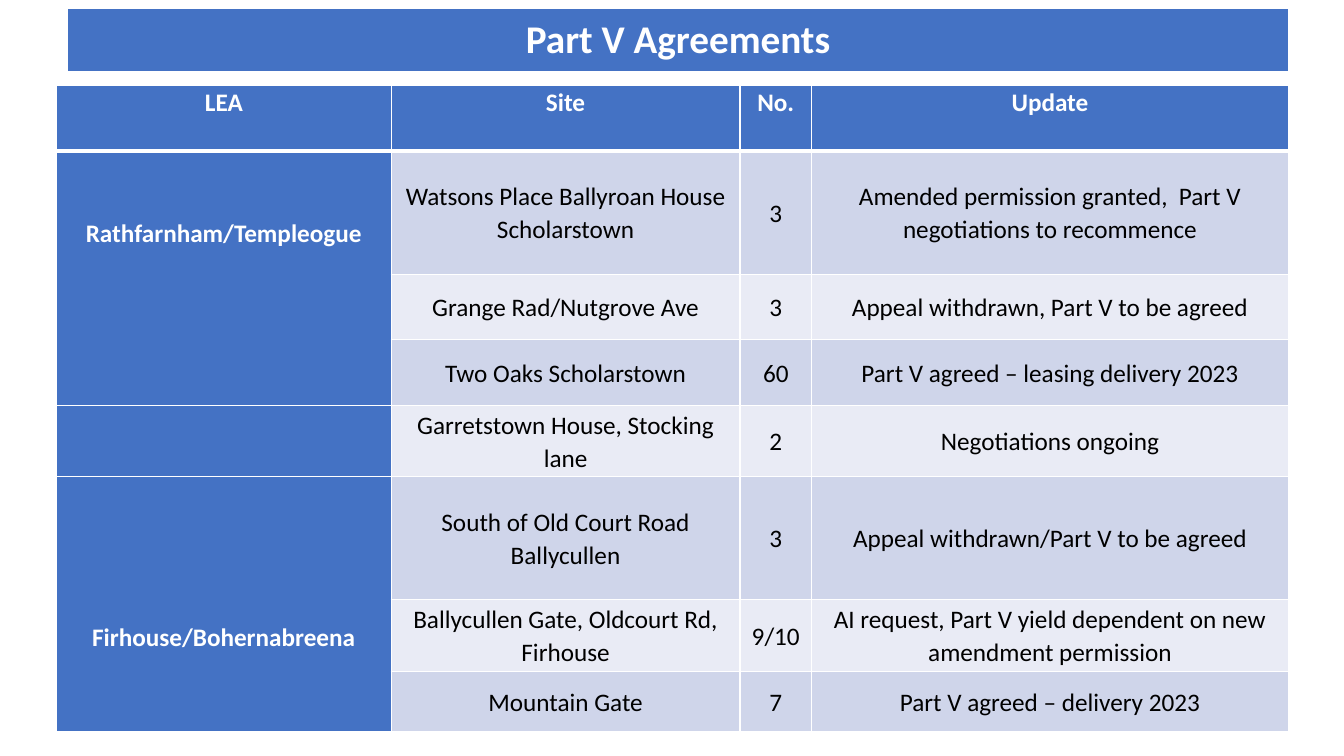
from lxml.etree import SubElement
from pptx import Presentation
from pptx.dml.color import RGBColor
from pptx.enum.text import MSO_ANCHOR, PP_ALIGN
from pptx.oxml.ns import qn
from pptx.util import Inches, Pt

BLUE = RGBColor(0x44, 0x72, 0xC4)
BAND_DARK = RGBColor(0xCF, 0xD5, 0xEA)
BAND_LIGHT = RGBColor(0xE9, 0xEB, 0xF5)
WHITE = RGBColor(0xFF, 0xFF, 0xFF)
BLACK = RGBColor(0x00, 0x00, 0x00)

HEADINGS = ["LEA", "Site", "No.", "Update"]
SITES = [
    ("Watsons Place Ballyroan House Scholarstown", "3",
     "Amended permission granted,  Part V negotiations to recommence"),
    ("Grange Rad/Nutgrove Ave", "3", "Appeal withdrawn, Part V to be agreed"),
    ("Two Oaks Scholarstown", "60", "Part V agreed – leasing delivery 2023"),
    ("Garretstown House, Stocking lane", "2", "Negotiations ongoing"),
    ("South of Old Court Road Ballycullen", "3", "Appeal withdrawn/Part V to be agreed"),
    ("Ballycullen Gate, Oldcourt Rd, Firhouse", "9/10",
     "AI request, Part V yield dependent on new amendment permission"),
    ("Mountain Gate", "7", "Part V agreed – delivery 2023"),
]
# First row, last row, name and anchor of each area
AREAS = [
    (1, 3, "Rathfarnham/Templeogue", MSO_ANCHOR.TOP),
    (5, 7, "Firhouse/Bohernabreena", MSO_ANCHOR.MIDDLE),
]
COLUMN_WIDTHS = [3.32, 3.46, 0.71, 4.73]
ROW_HEIGHTS = [0.65, 1.22, 0.65, 0.65, 0.71, 1.22, 0.71, 0.6]


class SlideBuilder:
    font = "Calibri"

    def __init__(self, page):
        self.page = page

    def table(self, left, top, widths, heights):
        frame = self.page.shapes.add_table(
            len(heights), len(widths), Inches(left), Inches(top),
            Inches(sum(widths)), Inches(sum(heights)))
        table = frame.table
        for column, width in zip(table.columns, widths):
            column.width = Inches(width)
        for row, height in zip(table.rows, heights):
            row.height = Inches(height)
        return table

    def borders(self, cell, top=1, bottom=1):
        properties = cell._tc.get_or_add_tcPr()
        for side, points in (("L", 1), ("R", 1), ("T", top), ("B", bottom)):
            line = SubElement(properties, qn(f"a:ln{side}"), w=str(Pt(points)))
            fill = SubElement(line, qn("a:solidFill"))
            SubElement(fill, qn("a:srgbClr"), val=str(WHITE))

    def cell_style(self, cell, fill, top=1, bottom=1):
        self.borders(cell, top, bottom)
        cell.fill.solid()
        cell.fill.fore_color.rgb = fill

    def cell_text(self, cell, text, color=WHITE, bold=True, size=18,
                  anchor=MSO_ANCHOR.MIDDLE, spacing=1.07, side=0.07, above=0, below=0):
        cell.margin_left = cell.margin_right = Inches(side)
        cell.margin_top, cell.margin_bottom = Inches(above), Inches(below)
        cell.vertical_anchor = anchor
        cell.text_frame.text = text
        para = cell.text_frame.paragraphs[0]
        para.alignment = PP_ALIGN.CENTER
        para.line_spacing = spacing
        for span in para.runs:
            span.font.name = self.font
            span.font.size = Pt(size)
            span.font.bold = bold
            span.font.color.rgb = color


def main():
    deck = Presentation()
    deck.slide_width, deck.slide_height = Inches(13.33), Inches(7.5)
    builder = SlideBuilder(deck.slides.add_slide(deck.slide_layouts[6]))

    # Agreements table: fills and borders
    agreements = builder.table(0.56, 0.85, COLUMN_WIDTHS, ROW_HEIGHTS)
    for row in range(len(ROW_HEIGHTS)):
        band = BAND_DARK if row % 2 else BAND_LIGHT
        for column in range(len(COLUMN_WIDTHS)):
            fill = BLUE if row == 0 or column == 0 else band
            builder.cell_style(agreements.cell(row, column), fill,
                               top=3 if row == 1 else 1, bottom=3 if row == 0 else 1)

    # Headings and sites
    for column, heading in enumerate(HEADINGS):
        builder.cell_text(agreements.cell(0, column), heading, anchor=MSO_ANCHOR.TOP)
    for row, site in enumerate(SITES, 1):
        for column, text in enumerate(site, 1):
            builder.cell_text(agreements.cell(row, column), text, BLACK, bold=False)

    # Areas spanning several sites
    for first, last, name, anchor in AREAS:
        area = agreements.cell(first, 0)
        area.merge(agreements.cell(last, 0))
        builder.cell_text(area, name, anchor=anchor, above=0.65)

    # Title bar
    title = builder.table(0.67, 0.08, [12.11], [0.64]).cell(0, 0)
    builder.cell_style(title, BLUE, bottom=3)
    builder.cell_text(title, "Part V Agreements", size=28, spacing=1.0,
                      side=0.14, above=0.07, below=0.07)

    deck.save("out.pptx")


if __name__ == "__main__":
    main()
